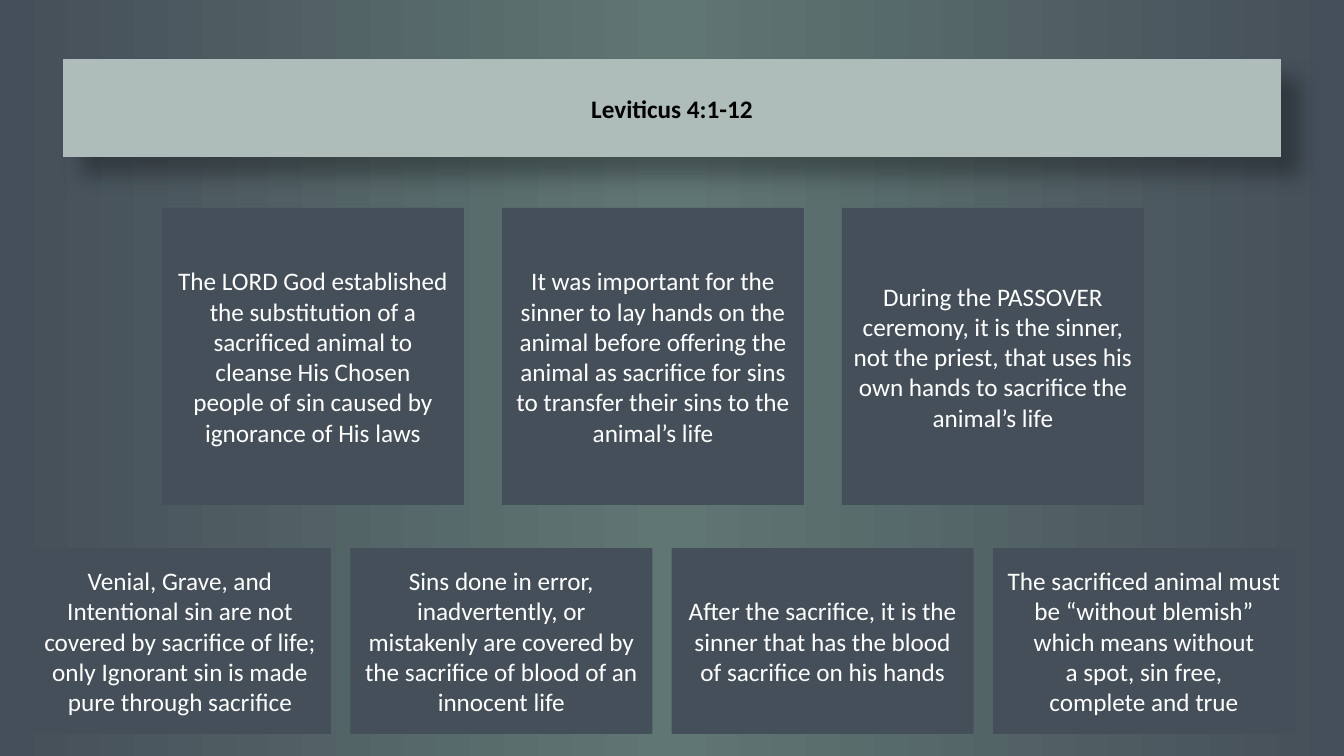
from copy import deepcopy
from lxml.etree import SubElement as Sub
from pptx import Presentation
from pptx.dml.color import RGBColor
from pptx.enum.shapes import MSO_SHAPE as Shape
from pptx.enum.text import MSO_ANCHOR as Anchor, MSO_AUTO_SIZE as Auto, PP_ALIGN as Align
from pptx.oxml.ns import qn
from pptx.util import Emu, Pt

SCALE = 914400 / 100.8
SLATE, SAGE, PALE = "454F59", "607673", "AEBCBA"

TOP = [
    "The LORD God established the substitution of a sacrificed animal to\n"
    "cleanse His Chosen\npeople of sin caused by ignorance of His laws",
    "It was important for the sinner to lay hands on the animal before offering "
    "the animal as sacrifice for sins to transfer their sins to the animal’s life",
    "During the PASSOVER ceremony, it is the sinner, not the priest, "
    "that uses his own hands to sacrifice the animal’s life",
]
BASE = [
    "Venial, Grave, and Intentional sin are not covered by sacrifice of life; "
    "only Ignorant sin is made pure through sacrifice",
    "Sins done in error, inadvertently, or mistakenly are covered by "
    "the sacrifice of blood of an innocent life",
    "After the sacrifice, it is the sinner that has the blood of sacrifice on his hands",
    "The sacrificed animal must be “without blemish” which means without\n"
    "a spot, sin free,\ncomplete and true",
]


def px(n):
    return Emu(round(n * SCALE))


def paint(color, code):
    color.rgb = RGBColor.from_string(code)


def style(shape, text, fill, ink, bold=False):
    shape.fill.solid()
    paint(shape.fill.fore_color, fill)
    shape.line.fill.background()
    frame = shape.text_frame
    frame.text = text
    frame.word_wrap = True
    frame.auto_size = Auto.NONE
    frame.vertical_anchor = Anchor.MIDDLE
    for para in frame.paragraphs:
        para.alignment = Align.CENTER
        para.font.name = "Calibri"
        para.font.size = Pt(18)
        para.font.bold = bold
        paint(para.font.color, ink)


def backdrop(slide):
    fill = slide.background.fill
    fill.gradient()
    fill.gradient_angle = 0
    stops = slide.element.find(".//" + qn("a:gsLst"))
    stops.append(deepcopy(stops[-1]))
    for stop, place, code in zip(fill.gradient_stops, (0, 0.5, 1), (SLATE, SAGE, SLATE)):
        stop.position = place
        paint(stop.color, code)


def shade(shape):
    effect = Sub(shape.element.spPr, qn("a:effectLst"))
    outer = Sub(effect, qn("a:outerShdw"), blurRad=str(Pt(15)), dist=str(Pt(18)),
                dir=str(45 * 60000), algn="tl", rotWithShape="0")
    color = Sub(outer, qn("a:srgbClr"), val="000000")
    Sub(color, qn("a:alpha"), val="30000")


def banner(slide, x, y, w, h):
    title = slide.shapes.title
    title.left, title.top, title.width, title.height = map(px, (x, y, w, h))
    style(title, "Leviticus 4:1-12", PALE, "000000", True)
    shade(title)


def cards(slide, x, y, w, h, texts, wide=302):
    step = (w - wide) / (len(texts) - 1)
    for i, text in enumerate(texts):
        card = slide.shapes.add_shape(
            Shape.RECTANGLE, px(x + i * step), px(y), px(wide), px(h))
        card.shadow.inherit = False
        style(card, text, SLATE, "FFFFFF")


def main():
    deck = Presentation()
    deck.slide_width, deck.slide_height = px(1344), px(756)
    slide = deck.slides.add_slide(deck.slide_layouts[5])
    backdrop(slide)
    banner(slide, 63, 59, 1218, 98)
    cards(slide, 162, 208, 982, 297, TOP)
    cards(slide, 29, 548, 1266, 186, BASE)
    deck.save("out.pptx")


if __name__ == "__main__":
    main()
